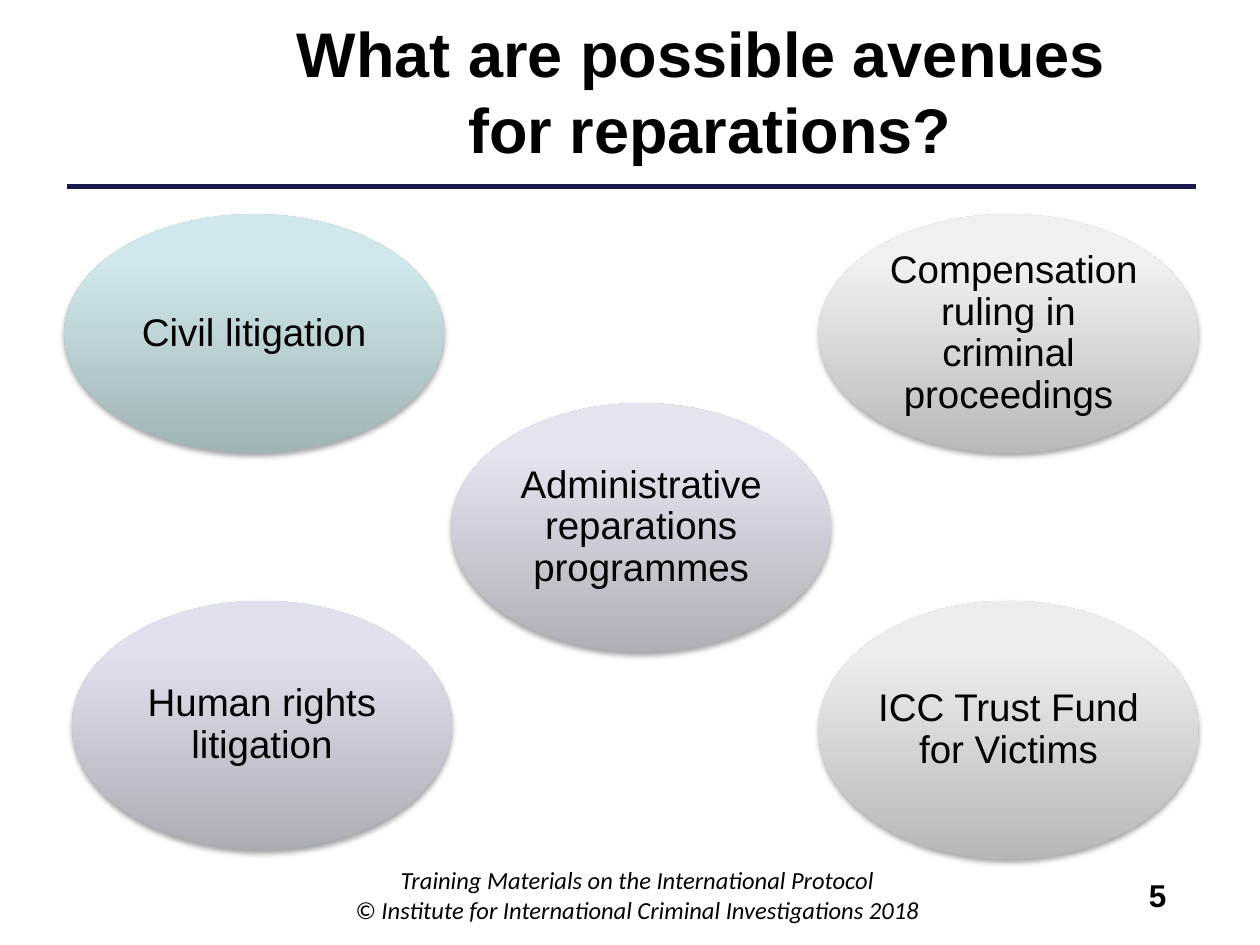
"""Build a slide of five shaded ovals naming the avenues for reparations."""
import copy
from dataclasses import dataclass

import pptx
import pptx.dml.color
import pptx.enum.dml
import pptx.enum.shapes
import pptx.enum.text
import pptx.oxml
import pptx.oxml.ns
import pptx.util

Pt = pptx.util.Pt
RGBColor = pptx.dml.color.RGBColor
PP_ALIGN = pptx.enum.text.PP_ALIGN
MSO_ANCHOR = pptx.enum.text.MSO_ANCHOR

BLACK = RGBColor(0x00, 0x00, 0x00)
NAVY = RGBColor(0x19, 0x19, 0x4D)
STOPS = (0, 0.8, 1)
OVAL_WIDTH = 217
OVAL_INSET = 1.4
LEFT, RIGHT = 36.7, 467.8
TOP, BOTTOM = 122.4, 343.4
NS = pptx.oxml.ns.nsdecls("a")
SHADOW = (f'<a:outerShdw {NS} blurRad="40000" dist="23000" dir="5400000" rotWithShape="0">'
          '<a:srgbClr val="000000"><a:alpha val="35000"/></a:srgbClr></a:outerShdw>')


@dataclass
class Avenue:
    text: str
    left: float
    top: float
    height: float
    colors: tuple[str, str, str]


@dataclass
class Label:
    lines: tuple[str, ...]
    left: float
    top: float
    width: float
    height: float
    font: str
    size: float
    bold: bool = False
    italic: bool = False
    align: PP_ALIGN = PP_ALIGN.CENTER
    anchor: MSO_ANCHOR = MSO_ANCHOR.TOP


AVENUES = [
    Avenue("Civil litigation", LEFT, TOP, 136.5, ("A0B3B5", "D0E8EB", "D1EAEC")),
    Avenue("Human rights litigation", 41.2, BOTTOM, 142, ("ACAEB6", "DFE2EC", "E0E3ED")),
    Avenue("Administrative reparations programmes", 257.9, 230.4, 142,
           ("B0AFB7", "E5E4EE", "E6E4EF")),
    Avenue("ICC Trust Fund for Victims", RIGHT, BOTTOM, 147.6, ("B8B6B9", "EFECF0", "F0EDF1")),
    Avenue(" Compensation ruling in criminal proceedings", RIGHT, TOP, 136.5,
           ("BAB9BA", "F1F0F1", "F3F1F3")),
]

LABELS = [
    Label(("What are possible avenues \vfor reparations?",), 110.9, 4.3, 589.7, 94.3,
          "Arial", 36, bold=True, anchor=MSO_ANCHOR.MIDDLE),
    Label(("Training Materials on the International Protocol",
           "© Institute for International Criminal Investigations 2018"),
          184.3, 491, 360, 45.4, "Calibri", 14, italic=True),
    Label(("5",), 649.4, 496.8, 71.3, 28.8, "Arial", 18, bold=True, align=PP_ALIGN.LEFT),
]


def add_rule(slide) -> None:
    """Draw the line under the title."""
    s = slide.shapes.add_connector(pptx.enum.shapes.MSO_CONNECTOR.STRAIGHT,
                                   Pt(38.2), Pt(106.6), Pt(683.3), Pt(106.6))
    s.line.color.rgb = NAVY
    s.line.width = Pt(2.5)
    s._element.spPr.append(pptx.oxml.parse_xml(f"<a:effectLst {NS}/>"))


def add_label(slide, label: Label) -> None:
    """Draw a text box with one paragraph per line."""
    s = slide.shapes.add_textbox(Pt(label.left), Pt(label.top), Pt(label.width), Pt(label.height))
    tf = s.text_frame
    tf.word_wrap = True
    tf.vertical_anchor = label.anchor
    tf.text = "\n".join(label.lines)
    for p in tf.paragraphs:
        p.alignment = label.align
        p.font.name = label.font
        p.font.size = Pt(label.size)
        p.font.bold = label.bold
        p.font.italic = label.italic
        p.font.color.rgb = BLACK


def shade(s, colors: tuple[str, str, str]) -> None:
    """Give a shape a vertical three-stop gradient and a soft shadow."""
    s.fill.gradient()
    s.fill.gradient_angle = 90
    stop_list = s._element.spPr.find(".//" + pptx.oxml.ns.qn("a:gsLst"))
    stop_list.append(copy.deepcopy(stop_list[-1]))
    for stop, position, color in zip(s.fill.gradient_stops, STOPS, colors):
        stop.position = position
        stop.color.rgb = RGBColor.from_string(color)
    s.line.fill.background()
    s.shadow.inherit = False
    effects = s._element.spPr.find(pptx.oxml.ns.qn("a:effectLst"))
    effects.append(pptx.oxml.parse_xml(SHADOW))


def add_avenue(slide, avenue: Avenue) -> None:
    """Draw one shaded oval with its centred text."""
    s = slide.shapes.add_shape(pptx.enum.shapes.MSO_SHAPE.OVAL, Pt(avenue.left), Pt(avenue.top),
                               Pt(OVAL_WIDTH), Pt(avenue.height))
    shade(s, avenue.colors)
    tf = s.text_frame
    tf.word_wrap = True
    tf.vertical_anchor = MSO_ANCHOR.MIDDLE
    tf.margin_left = tf.margin_right = tf.margin_top = tf.margin_bottom = Pt(OVAL_INSET)
    p = tf.paragraphs[0]
    p.text = avenue.text
    p.alignment = PP_ALIGN.CENTER
    p.line_spacing = 0.9
    p.font.name = "Arial"
    p.font.size = Pt(22)
    p.font.color.rgb = BLACK


def main() -> None:
    """Build and save the slide."""
    prs = pptx.Presentation()
    prs.slide_width, prs.slide_height = Pt(720), Pt(540)
    slide = prs.slides.add_slide(prs.slide_layouts[6])
    add_rule(slide)
    for avenue in AVENUES:
        add_avenue(slide, avenue)
    for label in LABELS:
        add_label(slide, label)
    prs.save("out.pptx")


if __name__ == "__main__":
    main()
